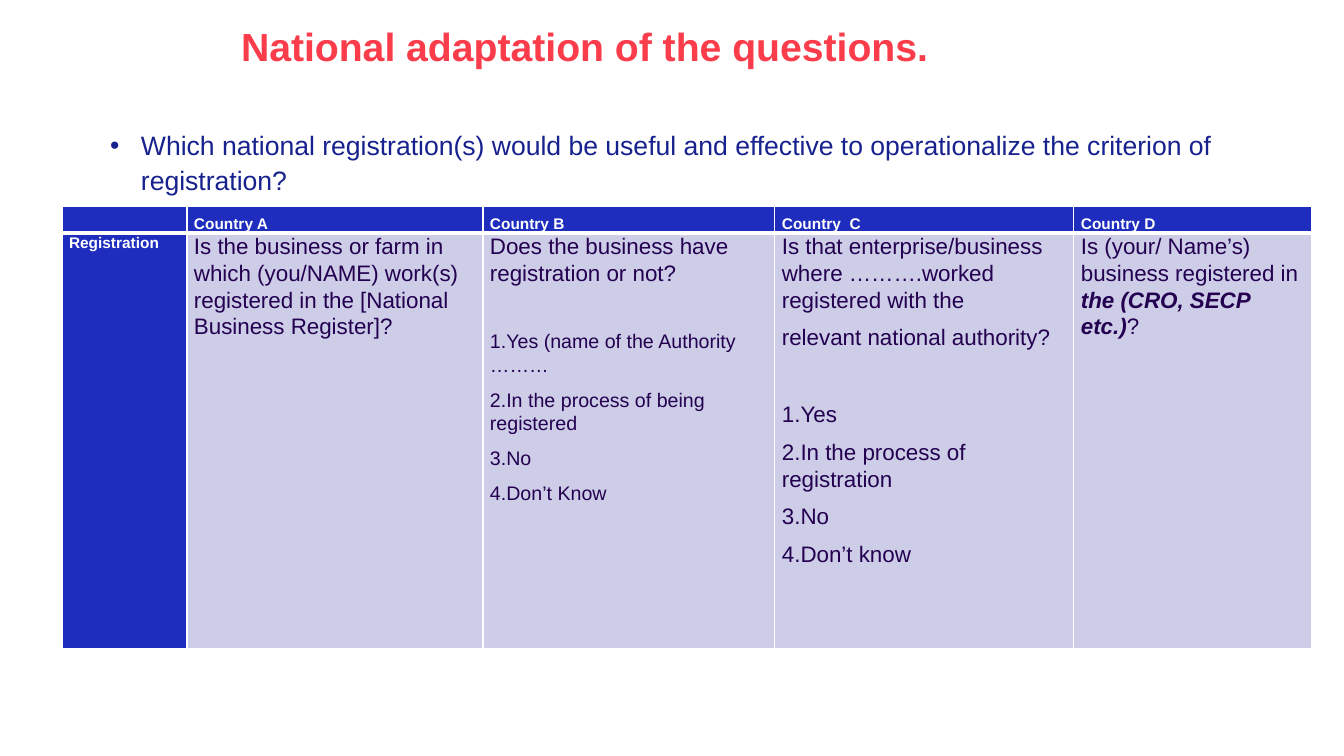
from lxml import etree
from pptx import Presentation
from pptx import util as u
from pptx.dml.color import RGBColor
from pptx.enum import text
from pptx.oxml.ns import qn

COLORS = {"title": "FA3C4B", "question": "17228E", "header": "1E2DBE",
          "body": "CDCDE8", "ink": "230050", "white": "FFFFFF"}
SCALE = 12192000 / 1344

TITLE = "National adaptation of the questions."
QUESTION = ("Which national registration(s) would be useful and effective "
            "to operationalize the criterion of registration?")
COUNTRIES = ["", "Country A", "Country B", "Country  C", "Country D"]
ROW_LABEL = "Registration"
ADAPTATIONS = [
    {"wording": [["Is the business or farm in which (you/NAME) work(s) "
                  "registered in the [National Business Register]?"]]},
    {"wording": [["Does the business have registration or not?"]],
     "answers": ["1.Yes (name of the Authority ………",
                 "2.In the process of being registered", "3.No", "4.Don’t Know"],
     "answer_size": 14, "gap": 23},
    {"wording": [["Is that enterprise/business where ……….worked registered with the"],
                 ["relevant national authority?"]],
     "answers": ["1.Yes", "2.In the process of registration", "3.No", "4.Don’t know"],
     "answer_size": 16, "gap": 28},
    {"wording": [["Is (your/ Name’s) business registered in ",
                  ("the (CRO, SECP etc.)", {"bold": True, "italic": True}), "?"]]},
]

TITLE_BOX = (241, 28, 974, 41)
QUESTION_BOX = (62, 126, 1236, 80)
TABLE_LEFT, TABLE_TOP = 62, 206
COLUMN_WIDTHS = [125, 296, 292, 299, 238]
ROW_HEIGHTS = [27, 416]

TITLE_FONT = {"size": u.Pt(28), "bold": True}
QUESTION_FONT = {"size": u.Pt(19)}
LABEL_FONT = {"size": u.Pt(11), "bold": True}
WORDING_FONT = {"size": u.Pt(16), "bold": False}
CELL_SPACING = {"line_spacing": 1.07, "space_after": u.Pt(8)}
FRAME = {"margin_left": 0, "margin_right": 0, "margin_top": 0,
         "margin_bottom": 0, "word_wrap": True}
CELL = {"margin_left": u.Inches(0.07), "margin_right": u.Inches(0.07),
        "margin_top": 0, "margin_bottom": 0}


def px(length):
    return round(length * SCALE)


def apply(target, values):
    for name, value in values.items():
        setattr(target, name, value)


def write(paragraph, parts, font, color, spacing):
    apply(paragraph, spacing)
    for part in parts:
        words, extra = (part, {}) if isinstance(part, str) else part
        run = paragraph.add_run()
        run.text = words
        apply(run.font, {"name": "Arial", **font, **extra})
        run.font.color.rgb = RGBColor.from_string(COLORS[color])


def add_frame(slide, box):
    frame = slide.shapes.add_textbox(*map(px, box)).text_frame
    apply(frame, FRAME)
    return frame


def set_borders(cell, top, bottom):
    properties = cell._tc.get_or_add_tcPr()
    sides = {"lnL": 1, "lnR": 1, "lnT": top, "lnB": bottom}
    for place, (side, points) in enumerate(sides.items()):
        line = etree.Element(qn("a:" + side), w=str(u.Pt(points)))
        fill = etree.SubElement(line, qn("a:solidFill"))
        etree.SubElement(fill, qn("a:srgbClr"), val=COLORS["white"])
        properties.insert(place, line)


def style_cell(cell, fill, top, bottom, anchor):
    apply(cell, {**CELL, "vertical_anchor": anchor})
    cell.fill.solid()
    cell.fill.fore_color.rgb = RGBColor.from_string(COLORS[fill])
    set_borders(cell, top, bottom)


def fill_adaptation(cell, adaptation):
    lines = [(parts, WORDING_FONT, 0) for parts in adaptation["wording"]]
    for number, answer in enumerate(adaptation.get("answers", [])):
        font = {**WORDING_FONT, "size": u.Pt(adaptation["answer_size"])}
        lines.append(([answer], font, 0 if number else adaptation["gap"]))
    frame = cell.text_frame
    for number, (parts, font, gap) in enumerate(lines):
        paragraph = frame.add_paragraph() if number else frame.paragraphs[0]
        spacing = {**CELL_SPACING, "space_before": u.Pt(gap)}
        write(paragraph, parts, font, "ink", spacing)


def add_question(slide):
    paragraph = add_frame(slide, QUESTION_BOX).paragraphs[0]
    properties = paragraph._p.get_or_add_pPr()
    properties.set("marL", str(px(79)))
    properties.set("indent", str(px(-31)))
    etree.SubElement(properties, qn("a:buFont"), typeface="Arial")
    etree.SubElement(properties, qn("a:buChar"), char="•")
    write(paragraph, [QUESTION], QUESTION_FONT, "question", {"line_spacing": 1.1})


def add_registration_table(slide):
    table = slide.shapes.add_table(
        len(ROW_HEIGHTS), len(COLUMN_WIDTHS), px(TABLE_LEFT), px(TABLE_TOP),
        px(sum(COLUMN_WIDTHS)), px(sum(ROW_HEIGHTS))).table
    table.horz_banding = False
    for column, width in zip(table.columns, COLUMN_WIDTHS):
        column.width = px(width)
    for row, height in zip(table.rows, ROW_HEIGHTS):
        row.height = px(height)

    for number, country in enumerate(COUNTRIES):
        header, body = table.cell(0, number), table.cell(1, number)
        style_cell(header, "header", 1, 3, text.MSO_ANCHOR.BOTTOM)
        style_cell(body, "body" if number else "header", 3, 1, text.MSO_ANCHOR.TOP)
        heading = header.text_frame.paragraphs[0]
        if country:
            write(heading, [country], LABEL_FONT, "white", CELL_SPACING)
            fill_adaptation(body, ADAPTATIONS[number - 1])
        else:
            etree.SubElement(heading._p, qn("a:endParaRPr"), sz="1100")
            write(body.text_frame.paragraphs[0], [ROW_LABEL], LABEL_FONT,
                  "white", CELL_SPACING)


def main():
    deck = Presentation()
    deck.slide_width, deck.slide_height = px(1344), px(756)
    slide = deck.slides.add_slide(deck.slide_layouts[6])
    add_question(slide)
    write(add_frame(slide, TITLE_BOX).paragraphs[0], [TITLE], TITLE_FONT,
          "title", {"line_spacing": 0.9})
    add_registration_table(slide)
    deck.save("out.pptx")


if __name__ == "__main__":
    main()
